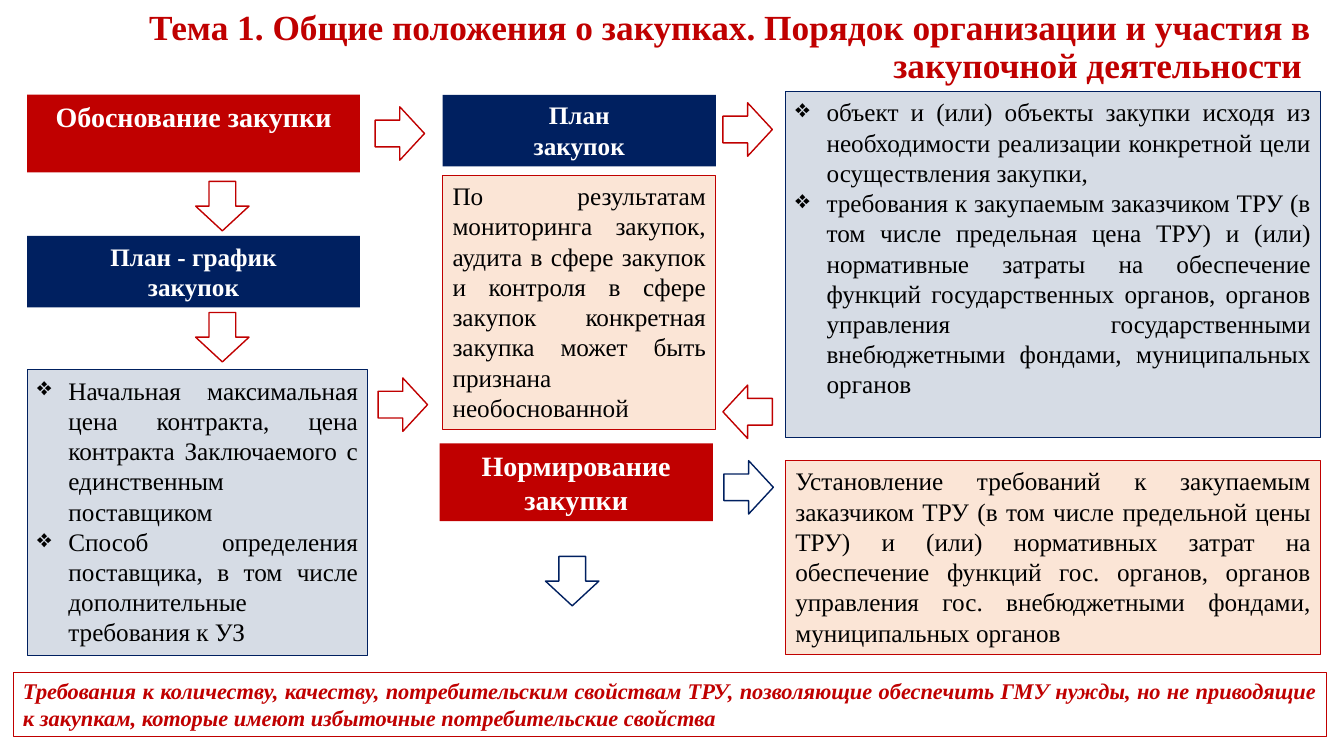
from lxml import etree
from pptx import Presentation
from pptx.dml.color import RGBColor
from pptx.enum import shapes, text
from pptx.oxml import ns
from pptx.util import Inches, Pt

RED = RGBColor(0xC0, 0x00, 0x00)
NAVY = RGBColor(0x00, 0x20, 0x60)
GREY = RGBColor(0xD6, 0xDC, 0xE5)
PEACH = RGBColor(0xFB, 0xE5, 0xD6)
WHITE = RGBColor(0xFF, 0xFF, 0xFF)
BLACK = RGBColor(0x00, 0x00, 0x00)
FONT = "Times New Roman"
ALIGN = text.PP_ALIGN
KIND = shapes.MSO_SHAPE


class Board:
    """Draws the parts of one slide in a shared style."""

    def __init__(self, slide):
        self.slide = slide

    def label(self, shape, lines, align, anchor=text.MSO_ANCHOR.TOP,
              color=BLACK, mark=None, **style):
        frame = shape.text_frame
        layout = {"word_wrap": True, "vertical_anchor": anchor,
                  "auto_size": text.MSO_AUTO_SIZE.NONE}
        for key, value in layout.items():
            setattr(frame, key, value)
        for i, line in enumerate(lines):
            para = frame.paragraphs[0] if i == 0 else frame.add_paragraph()
            para.alignment = align
            run = para.add_run()
            run.text = line
            for key, value in {"name": FONT, **style}.items():
                setattr(run.font, key, value)
            run.font.color.rgb = color
            if mark:
                self.bullet(para, mark)
        return frame

    def bullet(self, para, mark):
        props = para._p.get_or_add_pPr()
        props.set("marL", str(Inches(0.31)))
        props.set("indent", str(-Inches(0.31)))
        etree.SubElement(props, ns.qn("a:buChar")).set("char", mark)

    def shape(self, kind, place, fill, line=None, width=0.75):
        item = self.slide.shapes.add_shape(kind, *map(Inches, place))
        item.shadow.inherit = False
        item.fill.solid()
        item.fill.fore_color.rgb = fill
        if line is None:
            item.line.fill.background()
        else:
            item.line.color.rgb = line
            item.line.width = Pt(width)
        return item

    def title(self, words, place):
        box = self.slide.shapes.add_textbox(*map(Inches, place))
        frame = self.label(box, [words], ALIGN.RIGHT, text.MSO_ANCHOR.MIDDLE,
                           RED, size=Pt(25.2), bold=True)
        frame.paragraphs[0].line_spacing = 0.9

    def head(self, lines, place, fill, size):
        box = self.shape(KIND.RECTANGLE, place, fill)
        self.label(box, lines, ALIGN.CENTER, color=WHITE, size=Pt(size), bold=True)

    def note(self, lines, place, fill, line, size=18, **style):
        box = self.shape(KIND.RECTANGLE, place, fill, line)
        self.label(box, lines, ALIGN.JUSTIFY, size=Pt(size), **style)

    def arrow(self, left, top, turn=0, line=RED):
        item = self.shape(KIND.RIGHT_ARROW, (left, top, 0.49, 0.53), WHITE, line, 1)
        item.rotation = turn


def main():
    deck = Presentation()
    deck.slide_width, deck.slide_height = Inches(13.33), Inches(7.5)
    board = Board(deck.slides.add_slide(deck.slide_layouts[6]))

    board.title("Тема 1. Общие положения о закупках. Порядок организации и участия "
                "в закупочной деятельности ", (0, 0.15, 13.1, 0.65))

    for lines, place, fill, size in [
        (["Обоснование закупки"], (0.27, 0.94, 3.3, 0.77), RED, 20),
        (["План", "закупок"], (4.39, 0.94, 2.71, 0.71), NAVY, 18),
        (["План - график", "закупок"], (0.27, 2.34, 3.3, 0.71), NAVY, 18),
        (["Нормирование закупки"], (4.36, 4.4, 2.71, 0.77), RED, 20),
    ]:
        board.head(lines, place, fill, size)

    for lines, place in [
        (["объект и (или) объекты закупки исходя из необходимости реализации "
          "конкретной цели осуществления закупки,",
          "требования к закупаемым заказчиком ТРУ (в том числе предельная цена ТРУ) "
          "и (или) нормативные затраты на обеспечение функций государственных "
          "органов, органов управления государственными внебюджетными фондами, "
          "муниципальных органов"], (7.79, 0.91, 5.31, 3.43)),
        (["Начальная максимальная цена контракта, цена контракта Заключаемого "
          "с единственным поставщиком",
          "Способ определения поставщика, в том числе дополнительные требования "
          "к УЗ"], (0.27, 3.67, 3.38, 2.83)),
    ]:
        board.note(lines, place, GREY, NAVY, mark="❖")

    for line, place in [
        ("По результатам мониторинга закупок, аудита в сфере закупок и контроля "
         "в сфере закупок конкретная закупка может быть признана необоснованной",
         (4.39, 1.74, 2.71, 2.52)),
        ("Установление требований к закупаемым заказчиком ТРУ (в том числе "
         "предельной цены ТРУ) и (или) нормативных затрат на обеспечение функций "
         "гос. органов, органов управления гос. внебюджетными фондами, "
         "муниципальных органов", (7.79, 4.57, 5.31, 1.92)),
    ]:
        board.note([line], place, PEACH, RED)

    board.note(["Требования к количеству, качеству, потребительским свойствам ТРУ, "
                "позволяющие обеспечить ГМУ нужды, но не приводящие к закупкам, "
                "которые имеют избыточные потребительские свойства"],
               (0.13, 6.67, 13.03, 0.64), WHITE, RED, 16,
               color=RED, bold=True, italic=True)

    for left, top, turn, line in [
        (3.72, 1.06, 0, RED), (7.17, 1.02, 0, RED), (3.75, 3.75, 0, RED),
        (1.96, 1.78, 90, RED), (1.96, 3.08, 90, RED), (7.17, 3.82, 180, RED),
        (7.18, 4.57, 0, NAVY), (5.43, 5.5, 90, NAVY),
    ]:
        board.arrow(left, top, turn, line)

    deck.save("out.pptx")


if __name__ == "__main__":
    main()
